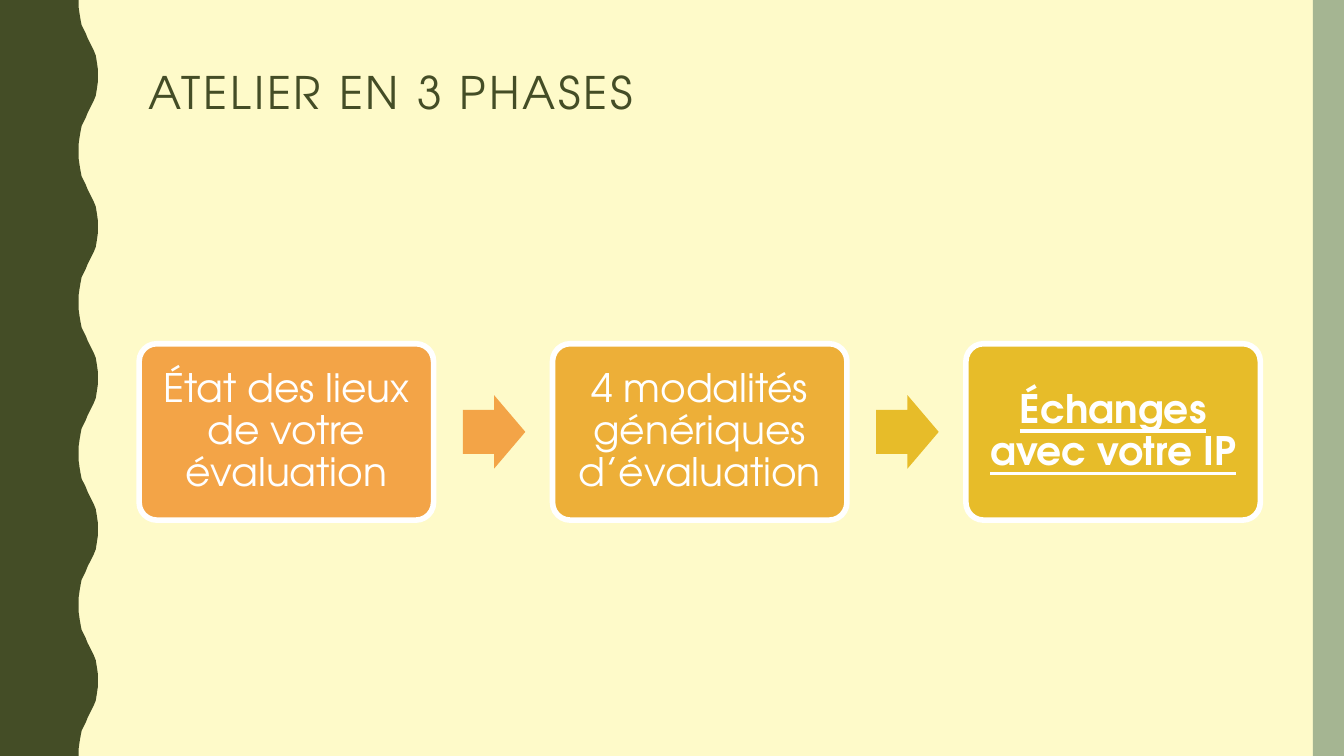
from pptx import Presentation, util as u
from pptx.dml.color import RGBColor
from pptx.enum import shapes, text

DARK_GREEN, SAGE, CREAM, WHITE = "444D26", "A5B592", "FEFAC9", "FFFFFF"
PHASES = [
    ("État des lieux de votre évaluation", "F3A447", False),
    ("4 modalités génériques d’évaluation", "EDAF38", False),
    ("Échanges avec votre IP", "E7BC29", True),
]
ARROW_COLOURS = ["F3A447", "E7BC29"]
HALF_WAVE = [
    (0.78, 0), (0.78, 0.07), (0.79, 0.14), (0.8, 0.2), (0.81, 0.25),
    (0.83, 0.29), (0.85, 0.33), (0.87, 0.38), (0.89, 0.42), (0.91, 0.46),
    (0.93, 0.5), (0.95, 0.55), (0.96, 0.61), (0.97, 0.68), (0.97, 0.75),
]
WAVE_PERIOD = 1.5
WAVE_COUNT = 5


def colour(value):
    return RGBColor.from_string(value)


class SlideBuilder:
    """Holds the style and the current slide, and adds each kind of element."""

    font = "TeX Gyre Adventor"

    def __init__(self, presentation):
        self.slide = presentation.slides.add_slide(presentation.slide_layouts[5])
        fill = self.slide.background.fill
        fill.solid()
        fill.fore_color.rgb = colour(CREAM)

    def paint(self, shape, fill, line=None):
        shape.shadow.inherit = False
        shape.fill.solid()
        shape.fill.fore_color.rgb = colour(fill)
        if line:
            shape.line.color.rgb = colour(line)
            shape.line.width = u.Pt(4)
        else:
            shape.line.fill.background()

    def shape(self, kind, left, top, width, height, fill, line=None, adjustments=()):
        shape = self.slide.shapes.add_shape(
            kind, u.Inches(left), u.Inches(top), u.Inches(width), u.Inches(height))
        for index, value in enumerate(adjustments):
            shape.adjustments[index] = value
        self.paint(shape, fill, line)
        return shape

    def outline(self, points, fill):
        builder = self.slide.shapes.build_freeform(
            u.Inches(points[0][0]), u.Inches(points[0][1]))
        builder.add_line_segments(
            [(u.Inches(x), u.Inches(y)) for x, y in points[1:]], close=True)
        self.paint(builder.convert_to_shape(), fill)

    def add_words(self, shape, words, size, ink, align, inset=None, emphasis=False):
        frame = shape.text_frame
        frame.word_wrap = True
        frame.auto_size = text.MSO_AUTO_SIZE.NONE
        frame.vertical_anchor = text.MSO_ANCHOR.MIDDLE
        if inset is not None:
            frame.margin_left = frame.margin_right = u.Inches(inset)
            frame.margin_top = frame.margin_bottom = u.Inches(inset)
        paragraph = frame.paragraphs[0]
        paragraph.alignment = align
        paragraph.line_spacing = 0.9
        run = paragraph.add_run()
        run.text = words
        run.font.name = self.font
        run.font.size = u.Pt(size)
        run.font.color.rgb = colour(ink)
        run.font.bold = emphasis
        run.font.underline = emphasis
        return run

    def title(self, words):
        title = self.slide.shapes.title
        title.left, title.top = u.Inches(1.37), u.Inches(0.42)
        title.width, title.height = u.Inches(11.13), u.Inches(1.05)
        run = self.add_words(title, words, 32, DARK_GREEN, text.PP_ALIGN.LEFT)
        run._r.get_or_add_rPr().set("spc", "200")

    def phase(self, left, words, fill, emphasis):
        box = self.shape(shapes.MSO_SHAPE.ROUNDED_RECTANGLE, left, 3.41, 2.92, 1.75,
                         fill, WHITE, [0.1])
        self.add_words(box, words, 28, WHITE, text.PP_ALIGN.CENTER, 0.17, emphasis)

    def arrow(self, left, fill):
        self.shape(shapes.MSO_SHAPE.RIGHT_ARROW, left, 3.92, 0.62, 0.73,
                   fill, adjustments=[0.6, 0.5])


def wavy_band():
    wave = HALF_WAVE + [(x, WAVE_PERIOD - y) for x, y in HALF_WAVE[-2:0:-1]]
    edge = [(x, y + WAVE_PERIOD * number)
            for number in range(WAVE_COUNT) for x, y in wave]
    bottom = WAVE_PERIOD * WAVE_COUNT
    return [(0, 0)] + edge + [(HALF_WAVE[0][0], bottom), (0, bottom)]


def main():
    presentation = Presentation()
    presentation.slide_width = u.Inches(13.33)
    presentation.slide_height = u.Inches(7.5)
    builder = SlideBuilder(presentation)
    builder.outline(wavy_band(), DARK_GREEN)
    builder.shape(shapes.MSO_SHAPE.RECTANGLE, 13.02, 0, 0.31, 7.5, SAGE)
    builder.title("ATELIER EN 3 PHASES")
    step = 4.1
    for index, (words, fill, emphasis) in enumerate(PHASES):
        builder.phase(1.38 + index * step, words, fill, emphasis)
    for index, fill in enumerate(ARROW_COLOURS):
        builder.arrow(4.59 + index * step, fill)
    presentation.save("out.pptx")


if __name__ == "__main__":
    main()
